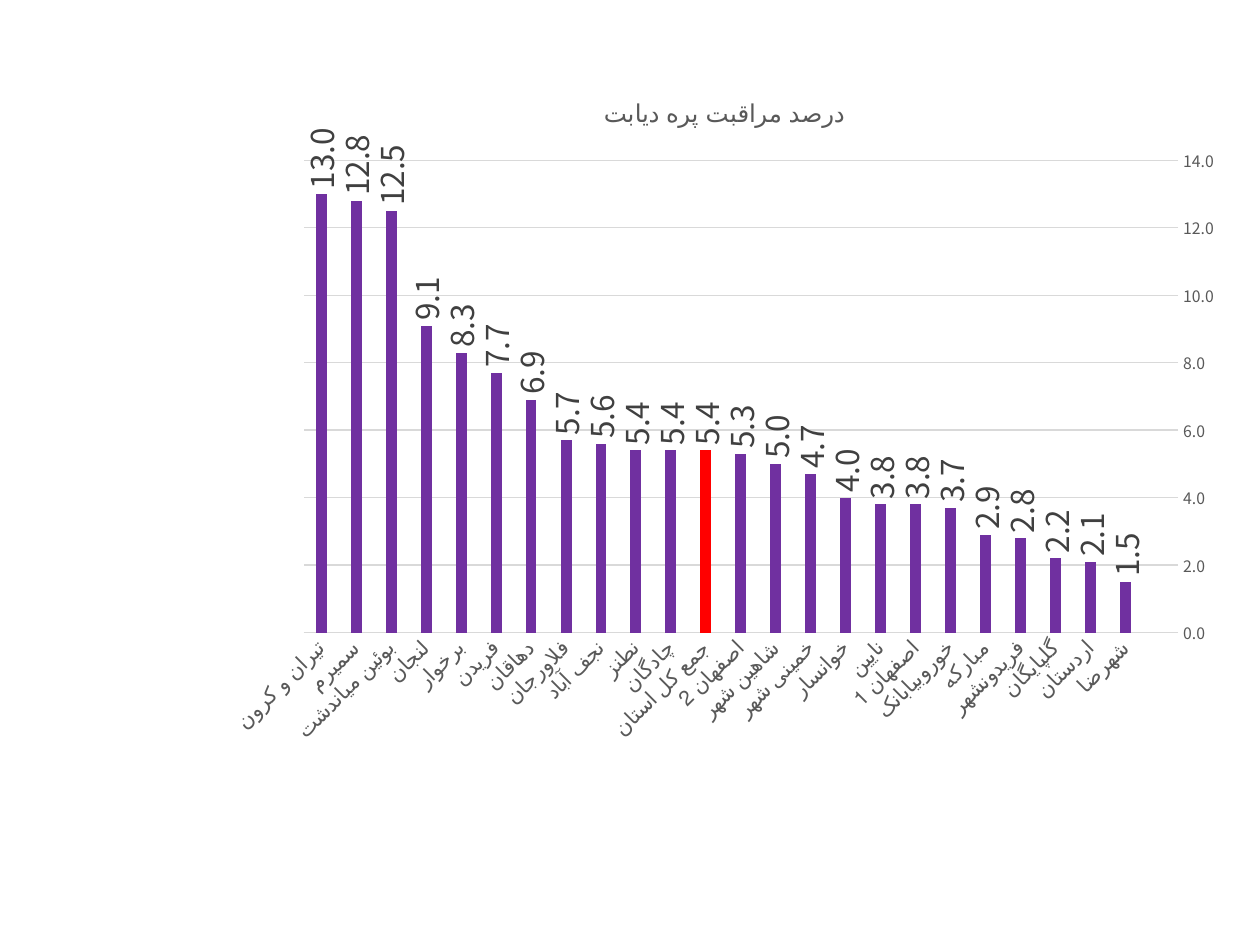
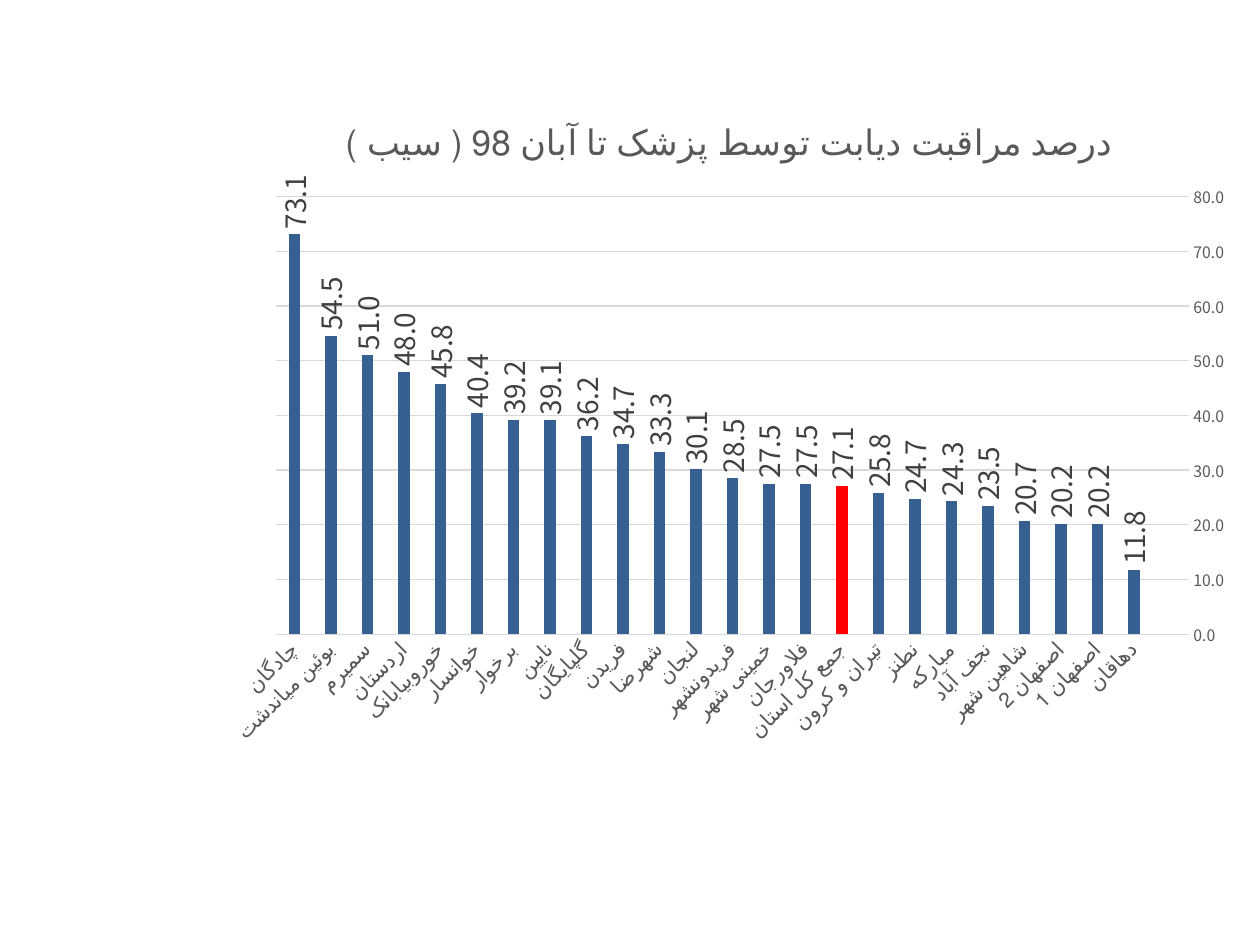
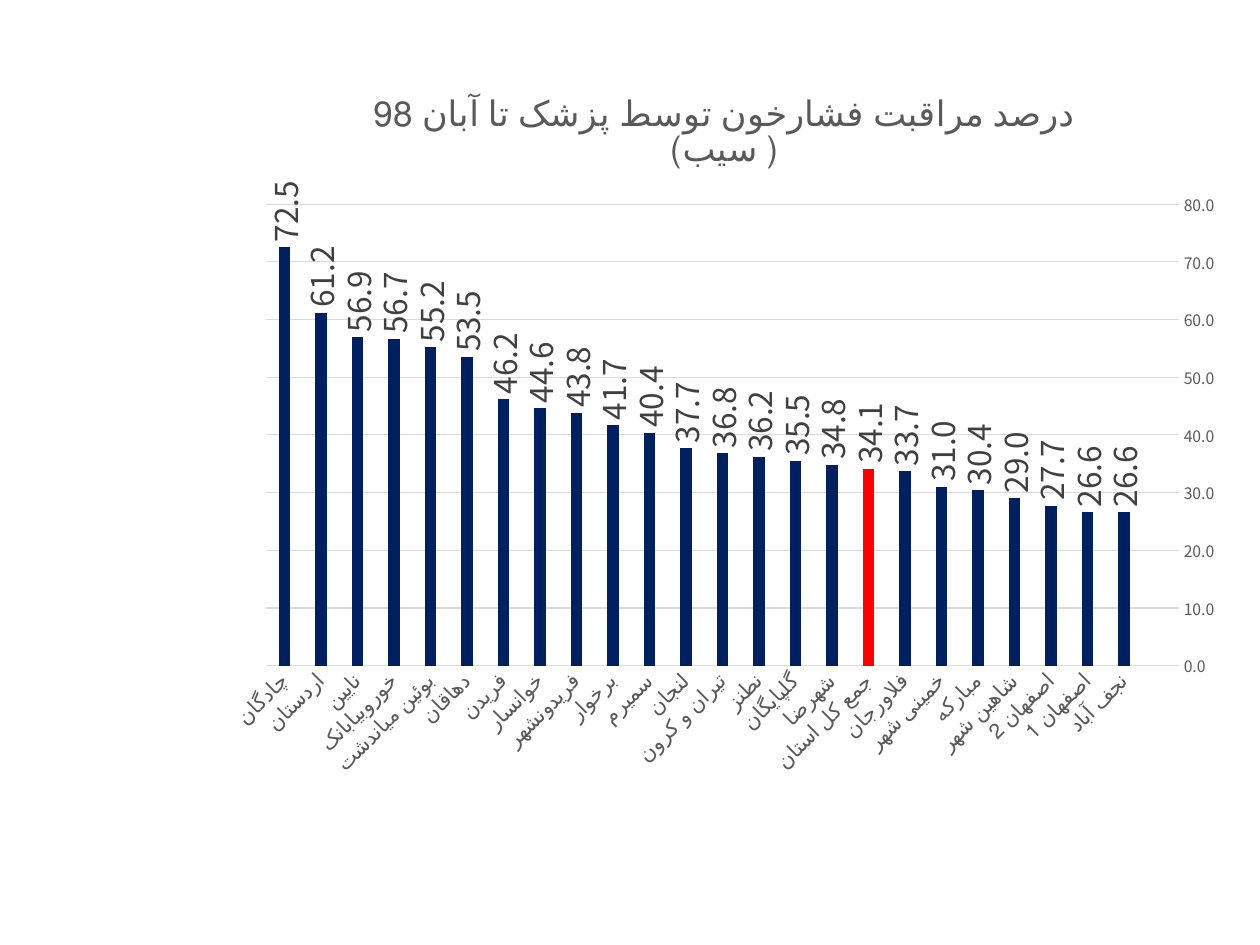
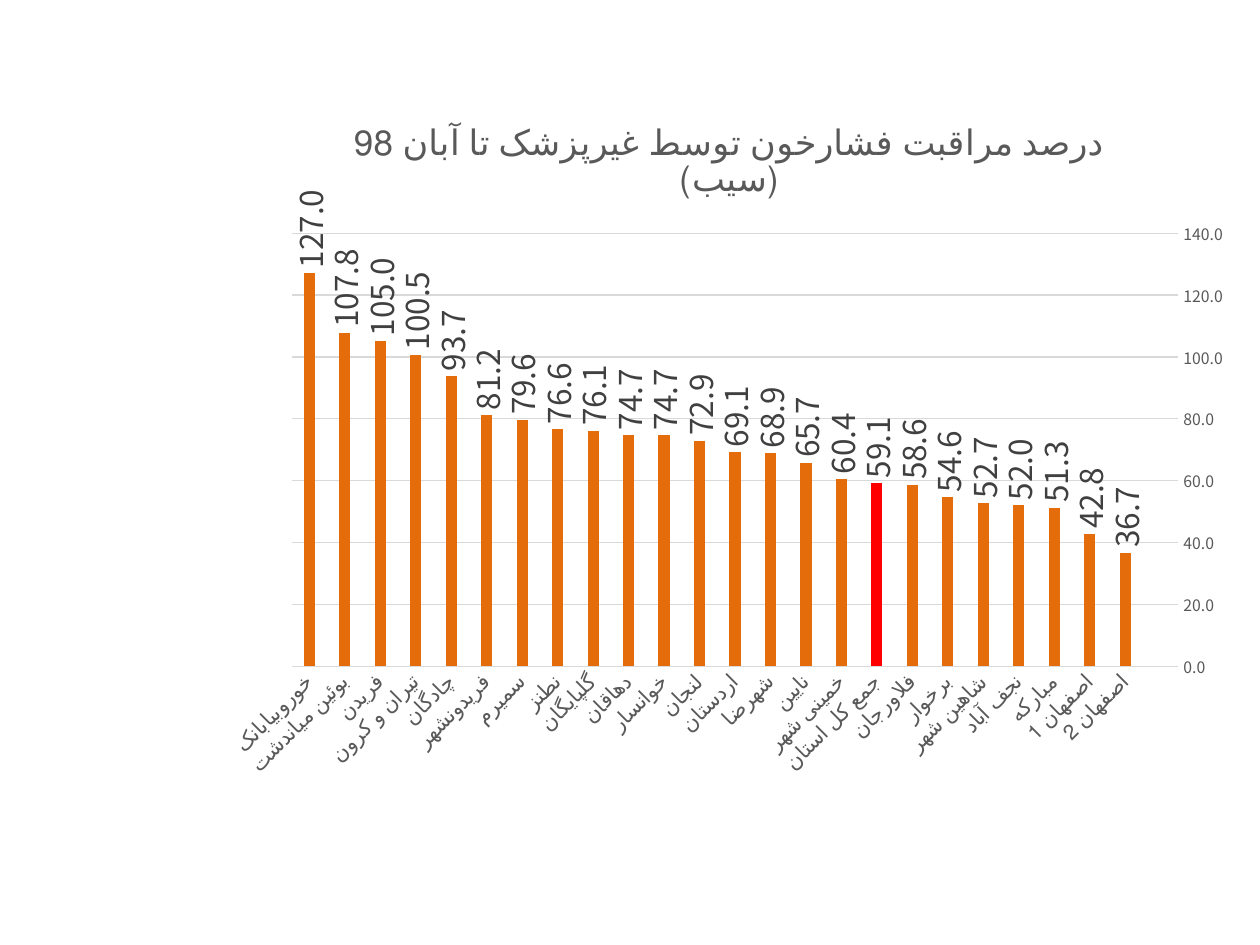
from dataclasses import dataclass

from pptx import Presentation
from pptx.chart import data as chart_data
from pptx.dml.color import RGBColor
from pptx.enum import chart as chart_enum
from pptx.util import Pt

FONT = "Noto Sans CJK KR"
BLACK = RGBColor(0x00, 0x00, 0x00)
TEXT_GREY = RGBColor(0x59, 0x59, 0x59)
LABEL_GREY = RGBColor(0x40, 0x40, 0x40)
LINE_GREY = RGBColor(0xD9, 0xD9, 0xD9)
RED = RGBColor(0xFF, 0x00, 0x00)
PURPLE = RGBColor(0x70, 0x30, 0xA0)
BLUE = RGBColor(0x37, 0x60, 0x92)
NAVY = RGBColor(0x00, 0x20, 0x60)
ORANGE = RGBColor(0xE4, 0x6C, 0x0A)

PROVINCE = "جمع کل استان"
NUMBER_FORMAT = "0.0"
LEFT = 121.7


@dataclass
class CareChart:
    title: str
    box: tuple
    color: RGBColor
    axis_max: float
    axis_step: float
    rates: dict
    series_name: str = "Series 1"
    title_size: float = 20
    title_font: str | None = None
    label_size: float = 18


CHARTS = [
    CareChart(
        "درصد مراقبت پره دیابت", (LEFT, 43.2, 584, 388.8), PURPLE, 14, 2,
        {
            "شهرضا": 1.5, "اردستان": 2.1, "گلپایگان": 2.2, "فریدونشهر": 2.8,
            "مبارکه": 2.9, "خوروبیابانک": 3.7, "اصفهان 1": 3.8, "نایین": 3.8,
            "خوانسار": 4, "خمینی شهر": 4.7, "شاهین شهر": 5, "اصفهان 2": 5.3,
            PROVINCE: 5.4, "چادگان": 5.4, "نطنز": 5.4, "نجف آباد": 5.6,
            "فلاورجان": 5.7, "دهاقان": 6.9, "فریدن": 7.7, "برخوار": 8.3,
            "لنجان": 9.1, "بوئین میاندشت": 12.5, "سمیرم": 12.8,
            "تیران و کرون": 13,
        },
        series_name="درصد مراقبت پره دیابت", title_size=14, title_font=FONT,
    ),
    CareChart(
        "درصد مراقبت دیابت توسط پزشک تا آبان 98 ( سیب )",
        (LEFT, 54.7, 589.7, 378), BLUE, 80, 10,
        {
            "دهاقان": 11.8, "اصفهان 1": 20.2, "اصفهان 2": 20.2,
            "شاهین شهر": 20.7, "نجف آباد": 23.5, "مبارکه": 24.3, "نطنز": 24.7,
            "تیران و کرون": 25.8, PROVINCE: 27.1, "فلاورجان": 27.5,
            "خمینی شهر": 27.5, "فریدونشهر": 28.5, "لنجان": 30.1,
            "شهرضا": 33.3, "فریدن": 34.7, "گلپایگان": 36.2, "نایین": 39.1,
            "برخوار": 39.2, "خوانسار": 40.4, "خوروبیابانک": 45.8,
            "اردستان": 48, "سمیرم": 51, "بوئین میاندشت": 54.5, "چادگان": 73.1,
        },
        label_size=16,
    ),
    CareChart(
        "درصد مراقبت فشارخون توسط پزشک تا آبان 98 ( سیب)",
        (LEFT, 37.4, 584, 414), NAVY, 80, 10,
        {
            "نجف آباد": 26.6, "اصفهان 1": 26.6, "اصفهان 2": 27.7,
            "شاهین شهر": 29, "مبارکه": 30.4, "خمینی شهر": 31,
            "فلاورجان": 33.7, PROVINCE: 34.1, "شهرضا": 34.8,
            "گلپایگان": 35.5, "نطنز": 36.2, "تیران و کرون": 36.8,
            "لنجان": 37.7, "سمیرم": 40.4, "برخوار": 41.7, "فریدونشهر": 43.8,
            "خوانسار": 44.6, "فریدن": 46.2, "دهاقان": 53.5,
            "بوئین میاندشت": 55.2, "خوروبیابانک": 56.7, "نایین": 56.9,
            "اردستان": 61.2, "چادگان": 72.5,
        },
    ),
    CareChart(
        "درصد مراقبت فشارخون توسط غیرپزشک تا آبان 98 (سیب)",
        (LEFT, 54.7, 589.7, 396.7), ORANGE, 140, 20,
        {
            "اصفهان 2": 36.7, "اصفهان 1": 42.8, "مبارکه": 51.3,
            "نجف آباد": 52, "شاهین شهر": 52.7, "برخوار": 54.6,
            "فلاورجان": 58.6, PROVINCE: 59.1, "خمینی شهر": 60.4,
            "نایین": 65.7, "شهرضا": 68.9, "اردستان": 69.1, "لنجان": 72.9,
            "خوانسار": 74.7, "دهاقان": 74.7, "گلپایگان": 76.1, "نطنز": 76.6,
            "سمیرم": 79.6, "فریدونشهر": 81.2, "چادگان": 93.7,
            "تیران و کرون": 100.5, "فریدن": 105, "بوئین میاندشت": 107.8,
            "خوروبیابانک": 127,
        },
    ),
]


def style_font(font, size, color, name=FONT):
    font.size = Pt(size)
    font.color.rgb = color
    font.bold = False
    if name:
        font.name = name


def rotate_text(element, degrees):
    body = element.xpath("c:txPr/a:bodyPr")[0]
    body.set("rot", str(degrees * 60000))
    body.set("vert", "horz")


def style_line(line):
    line.color.rgb = LINE_GREY
    line.width = Pt(0.75)


def add_title(chart, care):
    chart.has_title = True
    chart.chart_title.include_in_layout = False
    para = chart.chart_title.text_frame.paragraphs[0]
    para.text = care.title
    para._p.get_or_add_pPr().set("rtl", "1")
    style_font(para.runs[0].font, care.title_size, TEXT_GREY, care.title_font)


def style_axes(chart, care):
    districts, scale = chart.category_axis, chart.value_axis
    for axis, size in ((districts, 12), (scale, 9)):
        axis.major_tick_mark = chart_enum.XL_TICK_MARK.NONE
        axis.minor_tick_mark = chart_enum.XL_TICK_MARK.NONE
        style_font(axis.tick_labels.font, size, TEXT_GREY)
    districts.reverse_order = True
    style_line(districts.format.line)
    rotate_text(districts._element, -45)
    scale.minimum_scale = 0
    scale.maximum_scale = care.axis_max
    scale.major_unit = care.axis_step
    scale.tick_labels.number_format = NUMBER_FORMAT
    scale.tick_labels.number_format_is_linked = False
    scale.format.line.fill.background()
    scale.has_major_gridlines = True
    style_line(scale.major_gridlines.format.line)


def style_bars(plot, care):
    plot.gap_width = 219
    plot.overlap = -27
    plot.vary_by_categories = False
    series = plot.series[0]
    series.invert_if_negative = False
    series.format.fill.solid()
    series.format.fill.fore_color.rgb = care.color
    total = series.points[list(plot.categories).index(PROVINCE)].format.fill
    total.solid()
    total.fore_color.rgb = RED
    labels = series.data_labels
    labels.show_value = True
    labels.number_format = NUMBER_FORMAT
    labels.number_format_is_linked = False
    labels.position = chart_enum.XL_LABEL_POSITION.OUTSIDE_END
    style_font(labels.font, care.label_size, LABEL_GREY)
    rotate_text(labels._element, -90)


def add_care_chart(page, care):
    table = chart_data.CategoryChartData(number_format=NUMBER_FORMAT)
    table.categories = ["", *care.rates]
    table.add_series(care.series_name, [None, *care.rates.values()])
    box = [Pt(length) for length in care.box]
    chart = page.shapes.add_chart(
        chart_enum.XL_CHART_TYPE.COLUMN_CLUSTERED, *box, table
    ).chart
    chart.has_legend = False
    style_font(chart.font, 10, BLACK)
    add_title(chart, care)
    style_axes(chart, care)
    style_bars(chart.plots[0], care)


def main():
    deck = Presentation()
    deck.slide_width, deck.slide_height = Pt(720), Pt(540)
    for care in CHARTS:
        page = deck.slides.add_slide(deck.slide_layouts[6])
        add_care_chart(page, care)
    deck.save("out.pptx")


if __name__ == "__main__":
    main()
